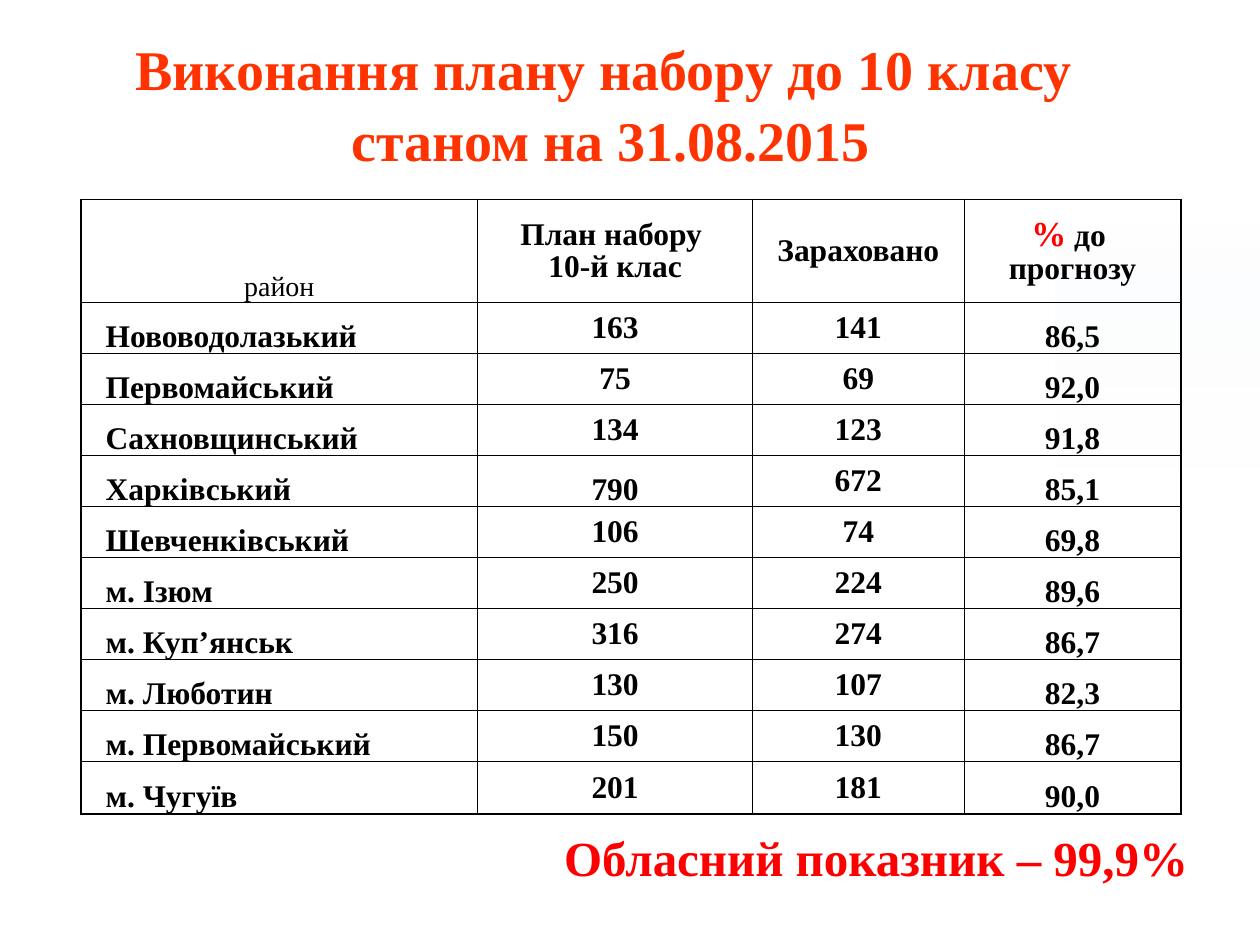
from dataclasses import dataclass

from lxml.etree import SubElement
from pptx import Presentation
from pptx.dml.color import RGBColor
from pptx.enum.shapes import MSO_SHAPE
from pptx.enum.text import MSO_ANCHOR, MSO_AUTO_SIZE, PP_ALIGN
from pptx.oxml import parse_xml
from pptx.oxml.ns import nsdecls, qn
from pptx.util import Pt


@dataclass(frozen=True)
class Theme:
    font: str = "Times New Roman"
    black: str = "000000"
    red: str = "FF0000"
    orange: str = "FF3300"
    white: str = "FFFFFF"
    mist: str = "F7FAFD"
    title: float = 32
    summary: float = 28
    percent: float = 20
    body: float = 18
    label: float = 16
    outer_line: float = 1
    inner_line: float = 0.5


THEME = Theme()
COLUMN_WIDTHS = [226.8, 157, 121, 123.8]
ROW_HEIGHTS = [59] + [29.15] * 9 + [30]
HEADERS = [
    [[("район", THEME.label, THEME.black, False)]],
    [[("План набору ", THEME.body, THEME.black, True)],
     [("10-й клас", THEME.body, THEME.black, True)]],
    [[("Зараховано", THEME.body, THEME.black, True)]],
    [[("%", THEME.percent, THEME.red, True), (" до ", THEME.body, THEME.black, True)],
     [("прогнозу", THEME.body, THEME.black, True)]],
]
DISTRICTS = [
    ("Нововодолазький", "163", "141", "86,5"),
    ("Первомайський", "75", "69", "92,0"),
    ("Сахновщинський", "134", "123", "91,8"),
    ("Харківський", "790", "672", "85,1"),
    ("Шевченківський", "106", "74", "69,8"),
    ("м. Ізюм", "250", "224", "89,6"),
    ("м. Куп’янськ", "316", "274", "86,7"),
    ("м. Люботин", "130", "107", "82,3"),
    ("м. Первомайський", "150", "130", "86,7"),
    ("м. Чугуїв", "201", "181", "90,0"),
]


class SlideBuilder:
    """Holds the theme and the current slide and draws each kind of element."""

    def __init__(self, page, theme):
        self.page = page
        self.theme = theme

    def add_span(self, para, text, size, color, bold):
        span = para.add_run()
        span.text = text
        span.font.name = self.theme.font
        span.font.size = Pt(size)
        span.font.bold = bold
        span.font.color.rgb = RGBColor.from_string(color)

    def fill_placeholder(self, index, bounds, lines, size, color, align, spacing):
        box = self.page.placeholders[index]
        box.left, box.top, box.width, box.height = map(Pt, bounds)
        frame = box.text_frame
        frame.word_wrap = True
        frame.auto_size = MSO_AUTO_SIZE.NONE
        frame.vertical_anchor = MSO_ANCHOR.TOP
        para = frame.paragraphs[0]
        para.alignment = align
        para.line_spacing = spacing
        para.space_before = Pt(0)
        for number, line in enumerate(lines):
            if number:
                para.add_line_break()
            self.add_span(para, line, size, color, True)

    def add_glow(self, bounds):
        panel = self.page.shapes.add_shape(MSO_SHAPE.RECTANGLE, *map(Pt, bounds))
        panel.shadow.inherit = False
        panel.line.fill.background()
        panel.fill.gradient()
        panel.fill.gradient_angle = 270
        start, end = panel.fill.gradient_stops
        start.color.rgb = RGBColor.from_string(self.theme.mist)
        end.color.rgb = RGBColor.from_string(self.theme.white)
        start.position, end.position = 0, 0.74
        tint = next(panel.element.iter(qn("a:srgbClr")))
        SubElement(tint, qn("a:alpha"), val="0")

    def add_table(self, left, top, widths, heights, headers, records):
        frame = self.page.shapes.add_table(
            len(heights), len(widths), Pt(left), Pt(top), Pt(sum(widths)), Pt(sum(heights)))
        table = frame.table
        table.first_row = table.horz_banding = False
        for column, width in zip(table.columns, widths):
            column.width = Pt(width)
        for row, height in zip(table.rows, heights):
            row.height = Pt(height)
        theme = self.theme
        body = [[[[(text, theme.body, theme.black, True)]] for text in record]
                for record in records]
        last_row, last_column = len(heights) - 1, len(widths) - 1
        for r, row in enumerate([headers] + body):
            for c, paragraphs in enumerate(row):
                is_name = r > 0 and c == 0
                at_bottom = c == 0 or (r > 0 and c == last_column) or (r, c) == (4, 1)
                cell = table.cell(r, c)
                self.fill_cell(cell, paragraphs, is_name, at_bottom)
                self.add_borders(cell, {"L": c == 0, "R": c == last_column,
                                        "T": r == 0, "B": r == last_row})

    def fill_cell(self, cell, paragraphs, is_name, at_bottom):
        cell.fill.background()
        cell.margin_left = Pt(14.2 if is_name else 0.7)
        cell.margin_right = cell.margin_top = Pt(0.7)
        cell.margin_bottom = Pt(0)
        cell.vertical_anchor = MSO_ANCHOR.BOTTOM if at_bottom else MSO_ANCHOR.MIDDLE
        frame = cell.text_frame
        for number, spans in enumerate(paragraphs):
            para = frame.add_paragraph() if number else frame.paragraphs[0]
            para.alignment = PP_ALIGN.LEFT if is_name else PP_ALIGN.CENTER
            para.line_spacing = 0.94
            for span in spans:
                self.add_span(para, *span)

    def add_borders(self, cell, outer_sides):
        properties = cell._tc.get_or_add_tcPr()
        for position, (side, is_outer) in enumerate(outer_sides.items()):
            width = Pt(self.theme.outer_line if is_outer else self.theme.inner_line)
            properties.insert(position, parse_xml(
                f'<a:ln{side} {nsdecls("a")} w="{width}"><a:solidFill>'
                f'<a:srgbClr val="{self.theme.black}"/></a:solidFill></a:ln{side}>'))


def main():
    deck = Presentation()
    deck.slide_width, deck.slide_height = Pt(720), Pt(540)
    page = deck.slides.add_slide(deck.slide_layouts[0])
    builder = SlideBuilder(page, THEME)
    builder.add_glow((603.4, 129.6, 116.6, 138.2))
    builder.fill_placeholder(
        0, (46, 13.7, 606.2, 85), ["Виконання плану набору до 10 класу ", "станом на 31.08.2015"],
        THEME.title, THEME.orange, PP_ALIGN.CENTER, 1.06)
    builder.add_table(46.2, 114, COLUMN_WIDTHS, ROW_HEIGHTS, HEADERS, DISTRICTS)
    builder.fill_placeholder(
        1, (76.3, 473, 609.8, 38.2), ["Обласний показник – 99,9%"],
        THEME.summary, THEME.red, PP_ALIGN.RIGHT, 0.9)
    deck.save("out.pptx")


if __name__ == "__main__":
    main()
